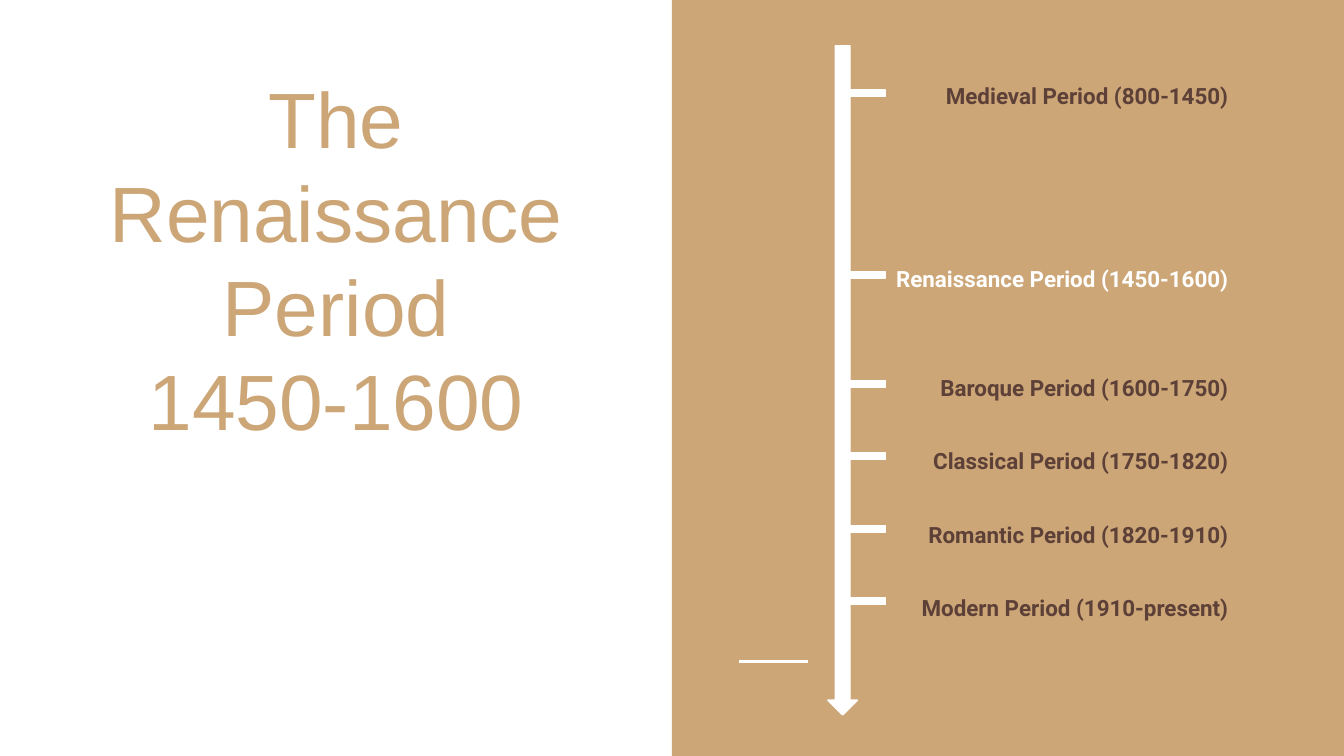
import dataclasses

import pptx
import pptx.dml.color
import pptx.enum.shapes
import pptx.enum.text
import pptx.oxml.xmlchemy
import pptx.util

Inches = pptx.util.Inches
Pt = pptx.util.Pt
RGB = pptx.dml.color.RGBColor.from_string
SHAPE = pptx.enum.shapes.MSO_SHAPE
ALIGN = pptx.enum.text.PP_ALIGN
ANCHOR = pptx.enum.text.MSO_ANCHOR


@dataclasses.dataclass(frozen=True)
class Theme:
    tan: str = "CCA677"
    white: str = "FFFFFF"
    brown: str = "5D4037"
    title_font: str = "Arial"
    label_font: str = "Roboto"
    title_size: float = 42
    label_size: float = 12


THEME = Theme()

# Slide size: 16:9
SLIDE_W = Inches(10)
SLIDE_H = SLIDE_W * 9 // 16

# Each period with its row on the timeline
PERIODS = [
    (0, "Medieval Period (800-1450)"),
    (5, "Renaissance Period (1450-1600)"),
    (8, "Baroque Period (1600-1750)"),
    (10, "Classical Period (1750-1820)"),
    (12, "Romantic Period (1820-1910)"),
    (14, "Modern Period (1910-present)"),
]
CURRENT_ROW = 5
TICK_STEP = 0.27  # inches between timeline rows
ROW_PT = 19.6  # height of one line of labels
PARA_GAP_PT = 3


def add_block(s, kind, x, y, w, h, color, outlined=True):
    sp = s.shapes.add_shape(kind, Inches(x), Inches(y), Inches(w), Inches(h))
    sp.shadow.inherit = False
    sp.fill.solid()
    sp.fill.fore_color.rgb = RGB(color)
    if outlined:
        sp.line.color.rgb = RGB(color)
        sp.line.width = Pt(0.75)
    else:
        sp.line.fill.background()
    return sp


def add_rule(s, x1, x2, y):
    line = s.shapes.add_connector(
        pptx.enum.shapes.MSO_CONNECTOR.STRAIGHT,
        Inches(x1), Inches(y), Inches(x2), Inches(y))
    line.line.color.rgb = RGB(THEME.white)
    line.line.width = Pt(1.5)
    props = line._element.spPr
    props.append(pptx.oxml.xmlchemy.OxmlElement("a:effectLst"))


def set_frame(tf, anchor):
    tf.word_wrap = True
    tf.auto_size = pptx.enum.text.MSO_AUTO_SIZE.NONE
    tf.vertical_anchor = anchor
    tf.margin_left = tf.margin_right = Inches(0.1)
    tf.margin_top = tf.margin_bottom = Inches(0.1)


def add_text(tf, index, text, align, font, size, color, bold=False):
    p = tf.add_paragraph() if index else tf.paragraphs[0]
    p.alignment = align
    r = p.add_run()
    r.text = text
    r.font.name = font
    r.font.size = Pt(size)
    r.font.bold = bold
    r.font.color.rgb = RGB(color)
    return p


def fill_title(s):
    title = s.shapes.title
    title.left, title.top = Inches(0.29), Inches(1.47)
    title.width, title.height = Inches(4.42), Inches(1.95)
    tf = title.text_frame
    set_frame(tf, ANCHOR.BOTTOM)
    for i, text in enumerate(["The Renaissance Period", "1450-1600"]):
        add_text(tf, i, text, ALIGN.CENTER, THEME.title_font,
                 THEME.title_size, THEME.tan)


def add_labels(s):
    box = s.shapes.add_textbox(
        Inches(6.52), Inches(0.48), Inches(2.72), Inches(4.69))
    tf = box.text_frame
    set_frame(tf, ANCHOR.TOP)
    last_row = 0
    for i, (row, text) in enumerate(PERIODS):
        color = THEME.white if row == CURRENT_ROW else THEME.brown
        p = add_text(tf, i, text, ALIGN.RIGHT, THEME.label_font,
                     THEME.label_size, color, bold=True)
        p.line_spacing = 1.15
        if i:
            skipped = row - last_row - 1
            p.space_before = Pt(PARA_GAP_PT + skipped * ROW_PT)
        last_row = row


def add_ticks(s):
    for row, _ in PERIODS:
        y = 0.67 + row * TICK_STEP
        add_block(s, SHAPE.RECTANGLE, 6.23, y, 0.36, 0.05, THEME.white)


def main():
    prs = pptx.Presentation()
    prs.slide_width, prs.slide_height = SLIDE_W, SLIDE_H
    s = prs.slides.add_slide(prs.slide_layouts[5])

    # Right-hand panel and its short rule
    add_block(s, SHAPE.RECTANGLE, 5, 0, 5, SLIDE_H / Inches(1), THEME.tan,
              outlined=False)
    add_rule(s, 5.5, 6.01, 4.92)

    # Title
    fill_title(s)

    # Timeline
    add_block(s, SHAPE.DOWN_ARROW, 6.16, 0.34, 0.22, 4.98, THEME.white)
    add_labels(s)
    add_ticks(s)

    prs.save("out.pptx")


if __name__ == "__main__":
    main()
